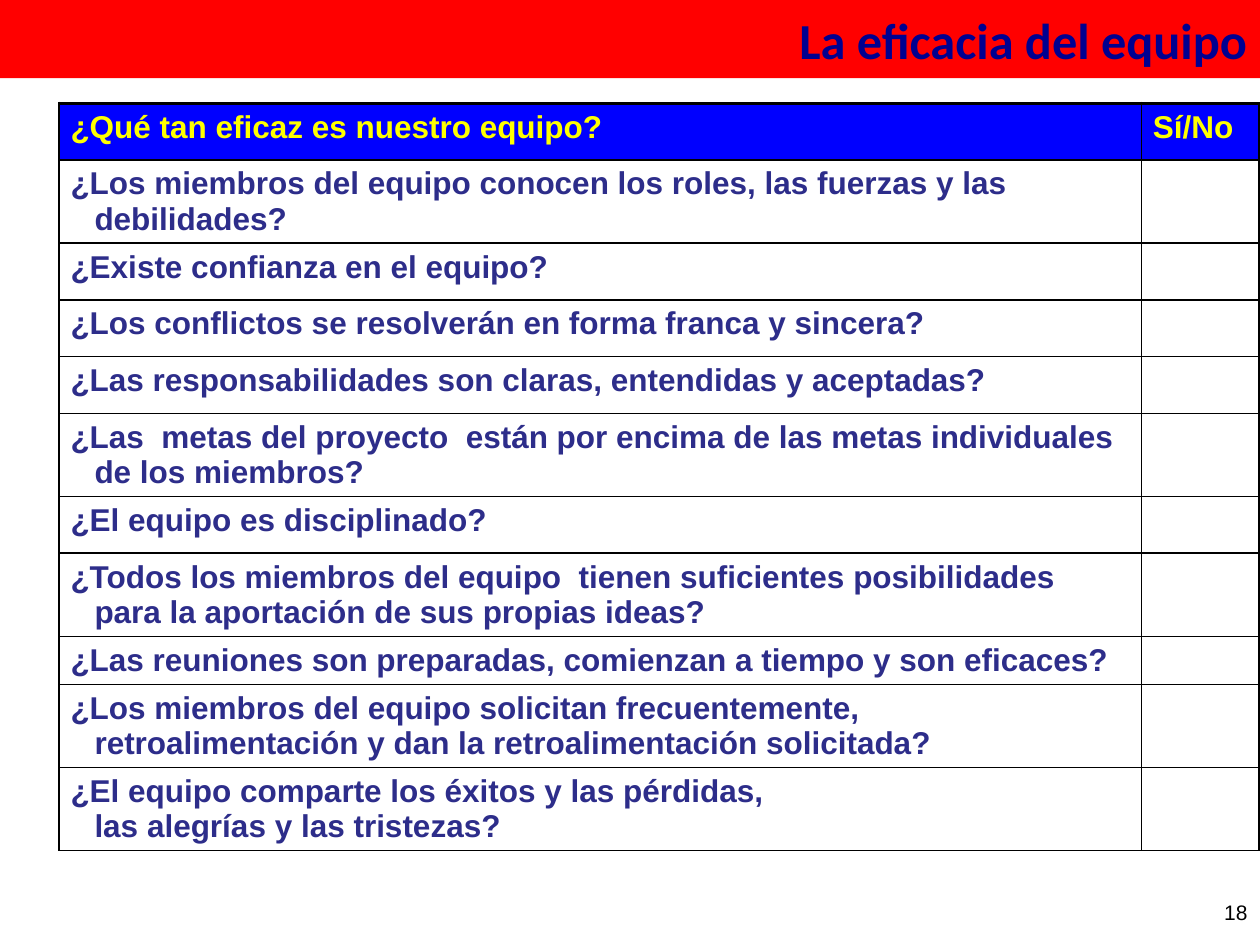
import pptx
import pptx.dml.color
import pptx.enum.text
import pptx.oxml
import pptx.oxml.ns
import pptx.util
from dataclasses import dataclass

Inches = pptx.util.Inches
Pt = pptx.util.Pt
RGB = pptx.dml.color.RGBColor.from_string
Align = pptx.enum.text.PP_ALIGN
Anchor = pptx.enum.text.MSO_ANCHOR


@dataclass
class Theme:
    band: str = "FF0000"
    title: str = "000090"
    header_fill: str = "0000FF"
    header_text: str = "FFFF00"
    cell_fill: str = "FFFFFF"
    question: str = "2D2D8A"
    line: str = "000000"
    title_size: float = 28.8
    table_size: float = 18
    number_size: float = 12
    thin: float = 1
    thick: float = 2.25


theme = Theme()


def set_font(para, name, size, color, bold=False):
    para.font.name = name
    para.font.size = Pt(size)
    para.font.bold = bold
    para.font.color.rgb = RGB(color)


def set_borders(cell, widths):
    """Draw the left, right, top and bottom lines, which precede the fill."""
    properties = cell._tc.get_or_add_tcPr()
    for position, (side, width) in enumerate(zip("LRTB", widths)):
        properties.insert(position, pptx.oxml.parse_xml(
            f'<a:ln{side} {pptx.oxml.ns.nsdecls("a")} w="{int(Pt(width))}">'
            f'<a:solidFill><a:srgbClr val="{theme.line}"/></a:solidFill></a:ln{side}>'))


deck = pptx.Presentation()
deck.slide_width, deck.slide_height = Inches(10), Inches(7.5)
page = deck.slides.add_slide(deck.slide_layouts[5])

# Title band
title = page.shapes.title
title.left, title.top, title.width, title.height = 0, 0, Inches(10), Inches(0.62)
title.fill.solid()
title.fill.fore_color.rgb = RGB(theme.band)
title.text_frame.text = "La eficacia del equipo"
title.text_frame.auto_size = pptx.enum.text.MSO_AUTO_SIZE.NONE
title.text_frame.vertical_anchor = Anchor.MIDDLE
para = title.text_frame.paragraphs[0]
para.alignment = Align.RIGHT
set_font(para, "Calibri", theme.title_size, theme.title, bold=True)

# Checklist: text and row height; the answer column stays empty
single, double = 0.45, 0.66
rows = [
    ("¿Qué tan eficaz es nuestro equipo?", single),
    ("¿Los miembros del equipo conocen los roles, las fuerzas y las debilidades?", double),
    ("¿Existe confianza en el equipo?", single),
    ("¿Los conflictos se resolverán en forma franca y sincera?", single),
    ("¿Las responsabilidades son claras, entendidas y aceptadas?", single),
    ("¿Las  metas del proyecto  están por encima de las metas individuales "
     "de los miembros?", double),
    ("¿El equipo es disciplinado?", single),
    ("¿Todos los miembros del equipo  tienen suficientes posibilidades "
     "para la aportación de sus propias ideas?", double),
    ("¿Las reuniones son preparadas, comienzan a tiempo y son eficaces?", 0.38),
    ("¿Los miembros del equipo solicitan frecuentemente, "
     "retroalimentación y dan la retroalimentación solicitada?", double),
    ("¿El equipo comparte los éxitos y las pérdidas,\vlas alegrías y las tristezas?", double),
]
table_height = sum(height for _, height in rows)
table = page.shapes.add_table(len(rows), 2, Inches(0.47), Inches(0.82),
                              Inches(9.53), Inches(table_height)).table
table.first_row = table.horz_banding = False
table.columns[0].width, table.columns[1].width = Inches(8.59), Inches(0.94)

for row, (text, height) in enumerate(rows):
    header = row == 0
    table.rows[row].height = Inches(height)
    for column, words in enumerate((text, "Sí/No" if header else "")):
        cell = table.cell(row, column)
        cell.margin_left = cell.margin_right = Inches(0.09)
        cell.margin_top = cell.margin_bottom = Inches(0.05)
        cell.fill.solid()
        cell.fill.fore_color.rgb = RGB(theme.header_fill if header else theme.cell_fill)
        set_borders(cell, (theme.thin, theme.thick if column == 1 else theme.thin,
                           theme.thick if header else theme.thin, theme.thin))
        cell.text = words
        para = cell.text_frame.paragraphs[0]
        set_font(para, "Arial", theme.table_size,
                 theme.header_text if header else theme.question, bold=True)
        if not header and column == 0:  # hanging indent
            indent = int(Inches(0.19))
            para._p.get_or_add_pPr().set("marL", str(indent))
            para._p.get_or_add_pPr().set("indent", str(-indent))

# Page number
box = page.shapes.add_textbox(Inches(7.67), Inches(6.98), Inches(2.33), Inches(0.52))
box.text_frame.word_wrap = True
box.text_frame.vertical_anchor = Anchor.MIDDLE
box.text_frame.text = "18"
para = box.text_frame.paragraphs[0]
para.alignment = Align.RIGHT
set_font(para, "Arial", theme.number_size, theme.line)

deck.save("out.pptx")
